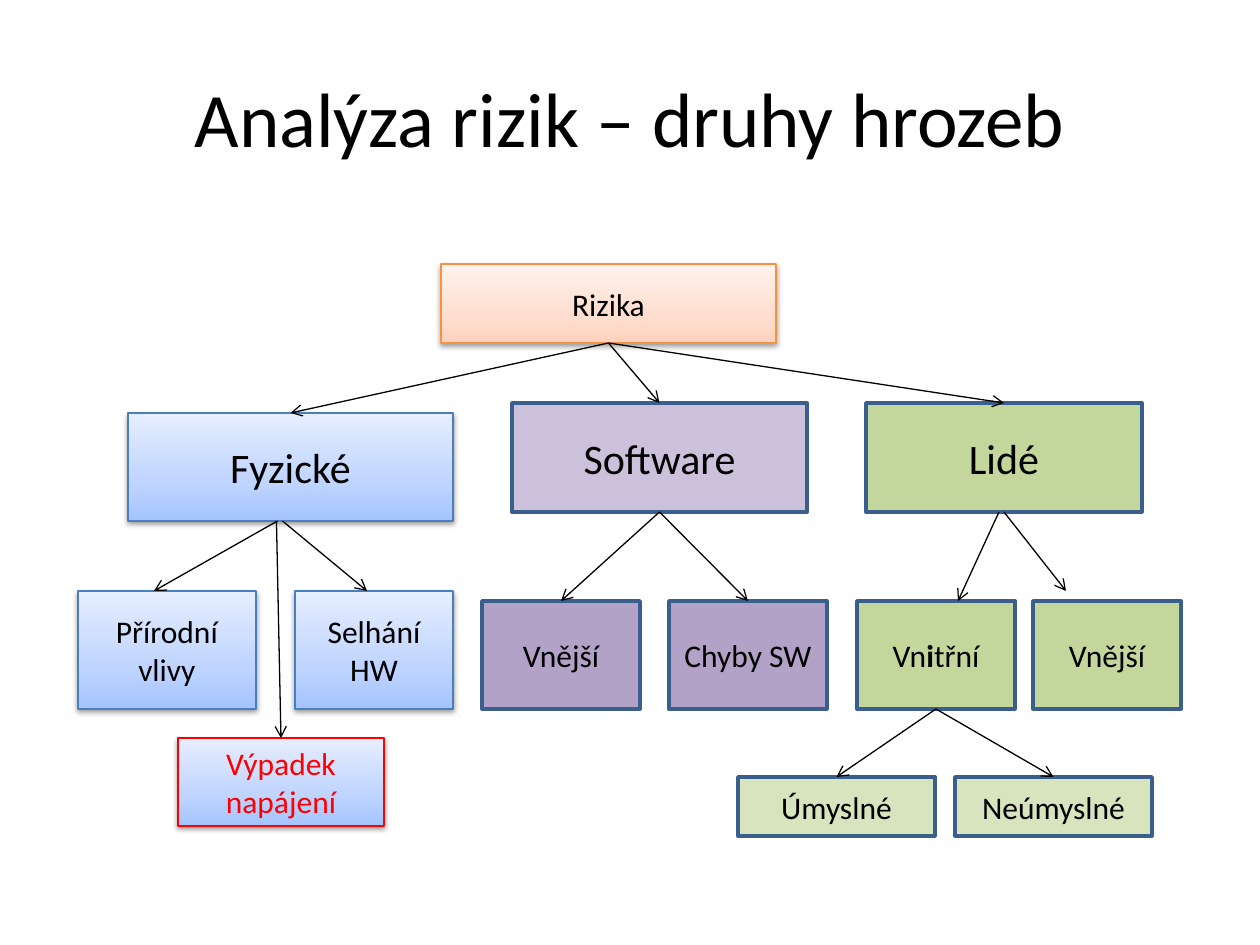
from copy import deepcopy
from dataclasses import dataclass

from lxml.etree import SubElement
from pptx import Presentation
from pptx.dml.color import RGBColor
from pptx.enum.shapes import MSO_CONNECTOR as Connector, MSO_SHAPE as Shape
from pptx.enum.text import MSO_ANCHOR as Anchor, PP_ALIGN as Align
from pptx.oxml.ns import qn
from pptx.util import Pt

PX = 914400 / 126


@dataclass(frozen=True)
class Theme:
    font: str = "Calibri"
    ink: str = "000000"
    alert: str = "FF0000"
    title: int = 44
    branch: int = 24
    leaf: int = 18
    thin: float = 0.75
    thick: float = 2


THEME = Theme()
PEACH = ("FFD2BD", "FFDED0", "FFF2ED")
BLUE = ("A4C4FF", "BFD4FF", "E6EEFF")
STOPS = (0, 0.35, 1)
STYLES = {
    "root": (PEACH, "F69240", THEME.ink),
    "physical": (BLUE, "4B7EBC", THEME.ink),
    "outage": (BLUE, THEME.alert, THEME.alert),
    "software": ("CCC1DA", "3A5F8C", THEME.ink),
    "software leaf": ("B3A2C7", "3A5F8C", THEME.ink),
    "people": ("C3D69B", "3A5F8C", THEME.ink),
    "people leaf": ("D7E4BD", "3A5F8C", THEME.ink),
}

TITLE = ("Analýza rizik – druhy hrozeb", (63, 38, 1134, 157))
NODES = {
    "risks": (["Rizika"], "root", THEME.leaf, (441, 264, 335, 79)),
    "physical": (["Fyzické"], "physical", THEME.branch, (128, 413, 325, 108)),
    "software": (["Software"], "software", THEME.branch, (512, 403, 295, 109)),
    "people": (["Lidé"], "people", THEME.branch, (866, 403, 276, 109)),
    "nature": (["Přírodní", "vlivy"], "physical", THEME.leaf, (78, 591, 178, 118)),
    "hardware": (["Selhání", "HW"], "physical", THEME.leaf, (295, 591, 158, 118)),
    "outage": (["Výpadek", "napájení"], "outage", THEME.leaf, (178, 738, 206, 88)),
    "attack": (["Vnější"], "software leaf", THEME.leaf, (482, 601, 158, 108)),
    "bugs": (["Chyby SW"], "software leaf", THEME.leaf, (669, 601, 158, 108)),
    "insiders": (["Vn*i*třní"], "people", THEME.leaf, (857, 601, 158, 108)),
    "outsiders": (["Vnější"], "people", THEME.leaf, (1033, 601, 148, 108)),
    "intended": (["Úmyslné"], "people leaf", THEME.leaf, (738, 777, 197, 59)),
    "accidental": (["Neúmyslné"], "people leaf", THEME.leaf, (955, 777, 197, 59)),
}
ARROWS = [
    ("risks", "physical"),
    ("risks", "software"),
    ("risks", "people"),
    ("physical", "nature"),
    ("physical", "hardware"),
    ("physical", "outage"),
    ("software", "attack"),
    ("software", "bugs"),
    ("people", "insiders"),
    ("people", "outsiders"),
    ("insiders", "intended"),
    ("insiders", "accidental"),
]
START_SHIFTS = {
    ("physical", "nature"): -13,
    ("physical", "hardware"): -8,
    ("physical", "outage"): -14,
    ("people", "insiders"): -5,
}
END_SHIFTS = {
    "nature": (-13, 0),
    "hardware": (-7, 0),
    "insiders": (22, 0),
    "outsiders": (-41, -10),
}


def emu(*lengths):
    return [round(length * PX) for length in lengths]


def color(code):
    return RGBColor.from_string(code)


def style_paragraph(para, size, ink):
    para.alignment = Align.CENTER
    para.font.name = THEME.font
    para.font.size = Pt(size)
    para.font.color.rgb = color(ink)


def fill_gradient(box, shades):
    box.fill.gradient()
    box.fill.gradient_angle = 90
    stop_list = box._element.spPr.find(qn("a:gradFill")).find(qn("a:gsLst"))
    stop_list.insert(1, deepcopy(stop_list[0]))
    for stop, position, shade in zip(box.fill.gradient_stops, STOPS, shades):
        stop.position = position
        stop.color.rgb = color(shade)


def add_shadow(box):
    effects = box._element.spPr.find(qn("a:effectLst"))
    shadow = SubElement(effects, qn("a:outerShdw"), blurRad="40000",
                        dist="20000", dir="5400000", rotWithShape="0")
    shade = SubElement(shadow, qn("a:srgbClr"), val=THEME.ink)
    SubElement(shade, qn("a:alpha"), val="38000")


def add_node(page, lines, style, size, place):
    fill, edge, ink = STYLES[style]
    graded = isinstance(fill, tuple)
    box = page.shapes.add_shape(Shape.RECTANGLE, *emu(*place))
    box.shadow.inherit = False
    box.line.color.rgb = color(edge)
    box.line.width = Pt(THEME.thin if graded else THEME.thick)
    if graded:
        fill_gradient(box, fill)
        add_shadow(box)
    else:
        box.fill.solid()
        box.fill.fore_color.rgb = color(fill)
    frame = box.text_frame
    frame.word_wrap = True
    frame.vertical_anchor = Anchor.MIDDLE
    for index, line in enumerate(lines):
        para = frame.add_paragraph() if index else frame.paragraphs[0]
        style_paragraph(para, size, ink)
        for part, words in enumerate(line.split("*")):
            span = para.add_run()
            span.text = words
            if part % 2:
                span.font.bold = True


def add_arrow(page, parent, child):
    left, top, width, height = NODES[parent][-1]
    start = (left + width / 2 + START_SHIFTS.get((parent, child), 0), top + height)
    left, top, width, height = NODES[child][-1]
    across, down = END_SHIFTS.get(child, (0, 0))
    end = (left + width / 2 + across, top + down)
    arrow = page.shapes.add_connector(Connector.STRAIGHT, *emu(*start, *end))
    arrow.line.color.rgb = color(THEME.ink)
    arrow.line.width = Pt(THEME.thin)
    SubElement(arrow.line._get_or_add_ln(), qn("a:tailEnd"), type="arrow")
    SubElement(arrow._element.spPr, qn("a:effectLst"))


def main():
    deck = Presentation()
    deck.slide_width, deck.slide_height = emu(1260, 945)
    page = deck.slides.add_slide(deck.slide_layouts[5])
    heading = page.shapes.title
    words, place = TITLE
    heading.left, heading.top, heading.width, heading.height = emu(*place)
    heading.text_frame.text = words
    heading.text_frame.vertical_anchor = Anchor.MIDDLE
    style_paragraph(heading.text_frame.paragraphs[0], THEME.title, THEME.ink)
    for node in NODES.values():
        add_node(page, *node)
    for parent, child in ARROWS:
        add_arrow(page, parent, child)
    deck.save("out.pptx")


if __name__ == "__main__":
    main()
